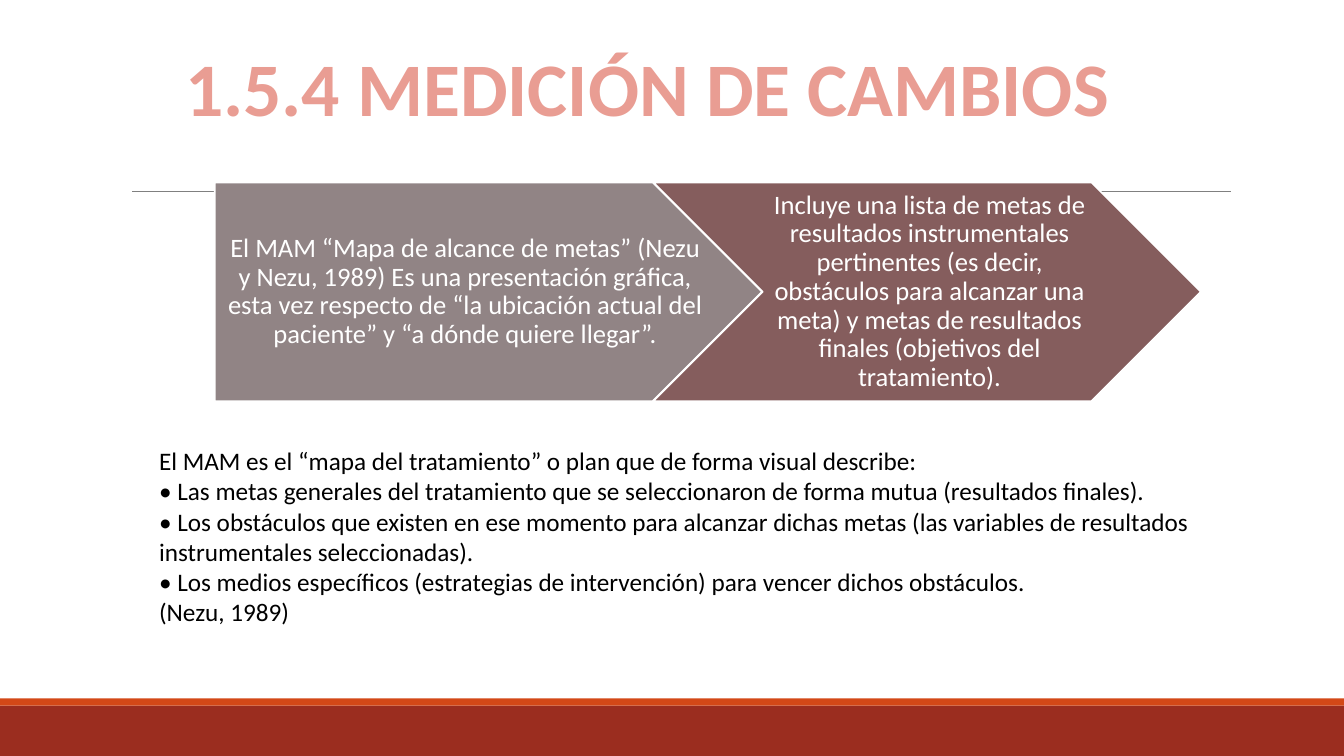
from lxml import etree
from pptx import Presentation
from pptx.dml.color import RGBColor
from pptx.enum.shapes import MSO_CONNECTOR, MSO_SHAPE
from pptx.enum.text import MSO_ANCHOR, MSO_AUTO_SIZE, PP_ALIGN
from pptx.oxml.ns import qn
from pptx.util import Pt

PX = 9144  # 100 px to the inch
PAGE_WIDTH, PAGE_HEIGHT = 1333, 750
TITLE_ONLY = 5
RECTANGLE, PENTAGON, CHEVRON = MSO_SHAPE.RECTANGLE, MSO_SHAPE.PENTAGON, MSO_SHAPE.CHEVRON
STRAIGHT = MSO_CONNECTOR.STRAIGHT
TOP, MIDDLE = MSO_ANCHOR.TOP, MSO_ANCHOR.MIDDLE
LEFT, CENTER = PP_ALIGN.LEFT, PP_ALIGN.CENTER
NO_FIT = MSO_AUTO_SIZE.NONE

COLORS = {
    "band": "9B2D1F", "stripe": "D34817", "rule": "808080",
    "pentagon": "918485", "chevron": "855D5D",
    "title": "E99D93", "light": "FFFFFF", "dark": "000000",
}

TITLE = "1.5.4 MEDICIÓN DE CAMBIOS"
STEPS = [
    (PENTAGON, "pentagon", 11,
     "El MAM “Mapa de alcance de metas” (Nezu y Nezu, 1989) Es una presentación gráfica, "
     "esta vez respecto de “la ubicación actual del paciente” y “a dónde quiere llegar”."),
    (CHEVRON, "chevron", 8,
     "Incluye una lista de metas de resultados instrumentales pertinentes (es decir, "
     "obstáculos para alcanzar una meta) y metas de resultados finales (objetivos del "
     "tratamiento)."),
]
DESCRIPTION = [
    "El MAM es el “mapa del tratamiento” o plan que de forma visual describe:",
    "• Las metas generales del tratamiento que se seleccionaron de forma mutua "
    "(resultados finales).",
    "• Los obstáculos que existen en ese momento para alcanzar dichas metas "
    "(las variables de resultados instrumentales seleccionadas).",
    "• Los medios específicos (estrategias de intervención) para vencer dichos obstáculos.",
    "(Nezu, 1989)",
]


def color(name):
    return RGBColor.from_string(COLORS[name])


def emu(*lengths):
    return [round(length * PX) for length in lengths]


def set_values(target, values):
    for name, value in values.items():
        setattr(target, name, value)


def write(shape, lines, size, ink, align=LEFT, spacing=1.0, bold=False, **frame_values):
    """Fill a shape with one formatted paragraph per line."""
    frame = shape.text_frame
    set_values(frame, {"word_wrap": True, "auto_size": NO_FIT, **frame_values})
    for index, line in enumerate(lines):
        para = frame.add_paragraph() if index else frame.paragraphs[0]
        set_values(para, {"alignment": align, "line_spacing": spacing})
        span = para.add_run()
        span.text = line
        set_values(span.font, {"name": "Calibri", "size": Pt(size), "bold": bold})
        span.font.color.rgb = color(ink)


def add_block(page, kind, box, fill, line=None):
    shape = page.shapes.add_shape(kind, *emu(*box))
    shape.shadow.inherit = False
    shape.fill.solid()
    shape.fill.fore_color.rgb = color(fill)
    if line:
        shape.line.color.rgb = color(line)
        shape.line.width = Pt(1.25)
    else:
        shape.line.fill.background()
    return shape


def add_footer(page, box):
    """Wide band with a thin stripe above it."""
    left, top, width, height = box
    stripe = 7
    add_block(page, RECTANGLE, (left, top + stripe, width, height - stripe), "band")
    add_block(page, RECTANGLE, (left, top, width, stripe), "stripe")


def add_rule(page, left, top, width):
    rule = page.shapes.add_connector(STRAIGHT, *emu(left, top, left + width, top))
    rule.line.color.rgb = color("rule")
    rule.line.width = Pt(0.5)
    etree.SubElement(rule._element.spPr, qn("a:effectLst"))


def add_steps(page, box):
    """Arrow steps, each overlapping the one before by its point."""
    left, top, width, height = box
    overlap = height // 2
    step_width = (width + overlap * (len(STEPS) - 1)) // len(STEPS)
    for index, (kind, fill, inset, text) in enumerate(STEPS):
        step_left = left + index * (step_width - overlap)
        step = add_block(page, kind, (step_left, top, step_width, height), fill, "light")
        margins = dict(zip(("margin_left", "margin_top", "margin_right", "margin_bottom"),
                           emu(inset, 6, 3, 6)))
        write(step, [text], 19, "light", CENTER, 0.9, vertical_anchor=MIDDLE, **margins)


def add_description(page, box):
    text_box = page.shapes.add_textbox(*emu(*box))
    write(text_box, DESCRIPTION, 18, "dark", vertical_anchor=TOP)


def add_title(page, box):
    """Bold title with outlined letters."""
    title = page.shapes.title
    set_values(title, dict(zip(("left", "top", "width", "height"), emu(*box))))
    write(title, [TITLE], 54, "title", CENTER, bold=True,
          word_wrap=False, vertical_anchor=TOP)
    outline = etree.Element(qn("a:ln"), w=str(Pt(1.75)))
    fill = etree.SubElement(outline, qn("a:solidFill"))
    etree.SubElement(fill, qn("a:srgbClr"), val=COLORS["band"])
    title.text_frame.paragraphs[0].runs[0].font._element.insert(0, outline) if hasattr(
        title.text_frame.paragraphs[0].runs[0].font, "_element"
    ) else title.text_frame.paragraphs[0].runs[0]._r.get_or_add_rPr().insert(0, outline)


def main():
    deck = Presentation()
    deck.slide_width, deck.slide_height = emu(PAGE_WIDTH, PAGE_HEIGHT)
    page = deck.slides.add_slide(deck.slide_layouts[TITLE_ONLY])
    add_footer(page, (0, 693, PAGE_WIDTH, 57))
    add_rule(page, 131, 190, 1090)
    add_steps(page, (213, 181, 978, 217))
    add_description(page, (148, 437, 1087, 222))
    add_title(page, (169, 36, 946, 101))
    deck.save("out.pptx")


if __name__ == "__main__":
    main()
